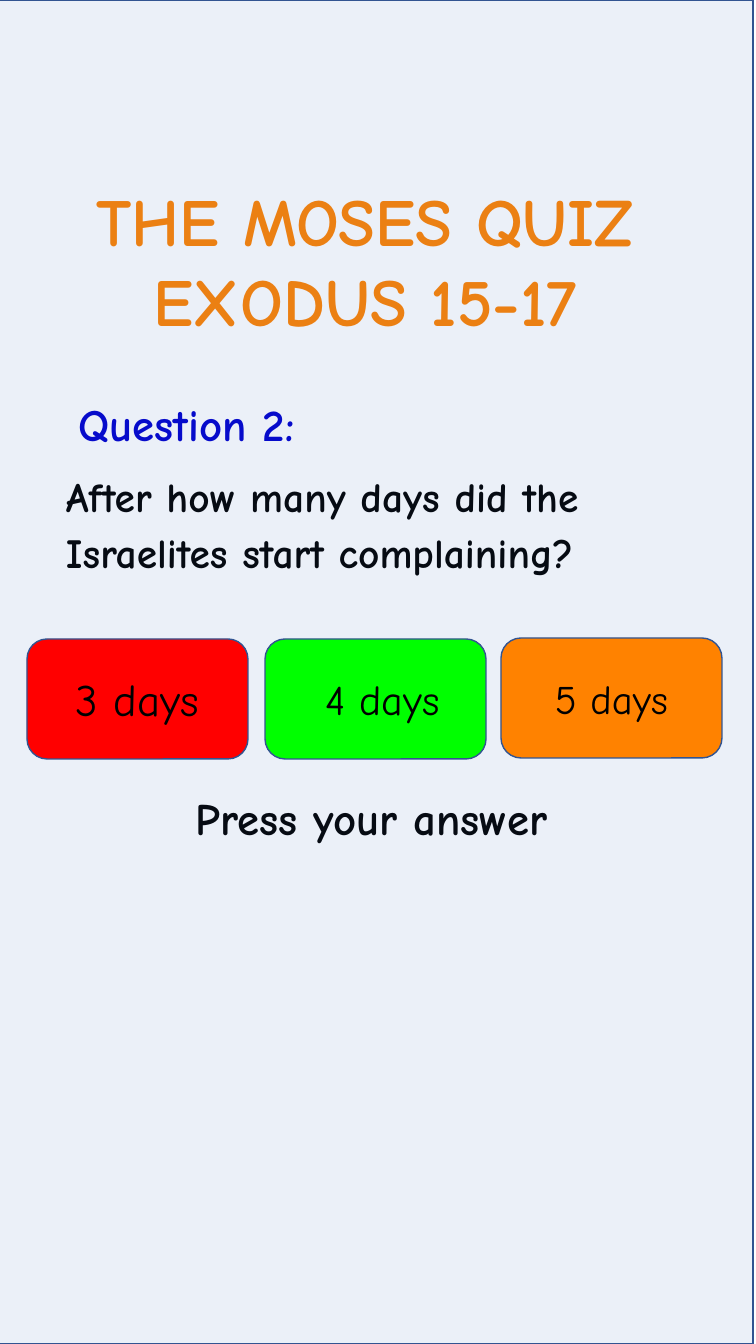
from lxml.etree import SubElement
from pptx import Presentation
from pptx.dml.color import RGBColor
from pptx.enum.shapes import MSO_SHAPE
from pptx.enum.text import MSO_ANCHOR, MSO_AUTO_SIZE, PP_ALIGN
from pptx.oxml.ns import qn
from pptx.util import Pt

PX = 914400 / 100.8
FONT = "Comic Neue"
ORANGE = RGBColor(0xFF, 0x82, 0x00)
RED = RGBColor(0xFF, 0x00, 0x00)
GREEN = RGBColor(0x00, 0xFF, 0x00)
BLUE = RGBColor(0x00, 0x00, 0xCC)
BLACK = RGBColor(0x00, 0x00, 0x00)
TINT = RGBColor(0x44, 0x72, 0xC4)
OUTLINE = RGBColor(0x32, 0x54, 0x91)


def px(*lengths):
    return [round(length * PX) for length in lengths]


def write(shape, lines, size, color, bold=True, wrap=True,
          anchor=MSO_ANCHOR.TOP, **paragraph_format):
    frame = shape.text_frame
    frame.auto_size = MSO_AUTO_SIZE.NONE
    frame.word_wrap = wrap
    frame.vertical_anchor = anchor
    frame.text = "\n".join(lines)
    for para in frame.paragraphs:
        for name, value in paragraph_format.items():
            setattr(para, name, value)
        span = para.runs[0]
        span.font.color.rgb = color
        for name, value in {"name": FONT, "size": Pt(size), "bold": bold}.items():
            setattr(span.font, name, value)


deck = Presentation()
deck.slide_width, deck.slide_height = px(756, 1344)
page = deck.slides.add_slide(deck.slide_layouts[5])

# Title
title = page.shapes.title
title.left, title.top, title.width, title.height = px(30, 174, 694, 173)
write(title, ["THE MOSES QUIZ ", "EXODUS 15-17 "], 48, ORANGE, wrap=False,
      alignment=PP_ALIGN.CENTER)

# Question and prompt
texts = [
    ((47, 392, 279, 65), "Question 2:", 32, BLUE,
     {"wrap": False, "alignment": PP_ALIGN.CENTER}),
    ((56, 460, 641, 147), "After how many days did the Israelites start complaining?",
     29.6, BLACK, {"line_spacing": Pt(40), "space_before": Pt(7.5)}),
    ((186, 792, 425, 73), "Press your answer", 32, BLACK,
     {"line_spacing": 0.9, "space_before": Pt(7.5)}),
]
for place, text, size, color, text_format in texts:
    box = page.shapes.add_textbox(*px(*place))
    write(box, [text], size, color, **text_format)

# Tinted panel over the page, then the answer buttons
panel = page.shapes.add_shape(MSO_SHAPE.RECTANGLE, *px(-3, 0, 756, 1344))
answers = [
    (27, 639, "3 days", 32, RED),
    (265, 639, " 4 days", 30, GREEN),
    (501, 638, "5 days", 29, ORANGE),
]
filled = [(panel, TINT)]
for left, top, text, size, color in answers:
    button = page.shapes.add_shape(MSO_SHAPE.ROUNDED_RECTANGLE, *px(left, top, 221, 120))
    write(button, [text], size, BLACK, bold=False, anchor=MSO_ANCHOR.MIDDLE,
          alignment=PP_ALIGN.CENTER)
    filled.append((button, color))

for shape, color in filled:
    shape.shadow.inherit = False
    shape.fill.solid()
    shape.fill.fore_color.rgb = color
    shape.line.color.rgb = OUTLINE
    shape.line.width = Pt(1)

# Panel transparency
panel_color = panel.fill._xPr.find(qn("a:solidFill")).find(qn("a:srgbClr"))
SubElement(panel_color, qn("a:alpha"), val="10000")

deck.save("out.pptx")
